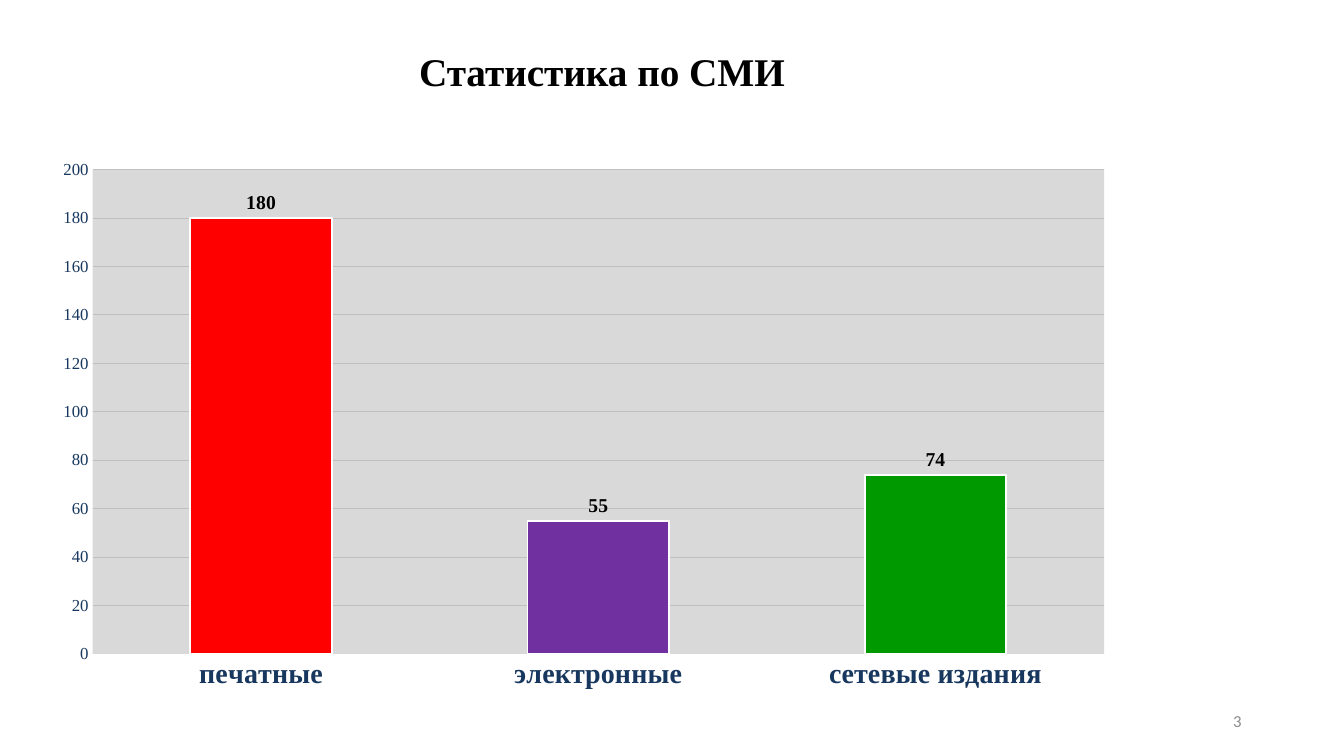
import pptx
import pptx.chart.data
import pptx.dml.color
import pptx.enum.chart
import pptx.enum.text
import pptx.oxml
import pptx.oxml.ns
import pptx.util

Pt = pptx.util.Pt
RGB = pptx.dml.color.RGBColor
Align = pptx.enum.text.PP_ALIGN
Anchor = pptx.enum.text.MSO_ANCHOR
Enum = pptx.enum.chart

BLACK = RGB(0, 0, 0)
WHITE = RGB(255, 255, 255)
GRAY = RGB(0x8C, 0x8C, 0x8C)
NAVY = RGB(0x17, 0x37, 0x5E)
PANEL = RGB(0xD9, 0xD9, 0xD9)
GRID = RGB(0xBF, 0xBF, 0xBF)
RED = RGB(255, 0, 0)
PURPLE = RGB(0x70, 0x30, 0xA0)
GREEN = RGB(0, 0x99, 0)


class Deck:
    serif = "Times New Roman"
    sans = "Calibri"

    def __init__(self):
        self.show = pptx.Presentation()
        self.show.slide_width = Pt(960)
        self.show.slide_height = Pt(540)
        self.slide = self.show.slides.add_slide(self.show.slide_layouts[5])

    def style(self, font, name, size, color, bold=False):
        font.name = name
        font.size = Pt(size)
        font.bold = bold
        font.color.rgb = color

    def label(self, frame, text, align, anchor, *look):
        frame.word_wrap = True
        frame.auto_size = pptx.enum.text.MSO_AUTO_SIZE.NONE
        frame.vertical_anchor = anchor
        para = frame.paragraphs[0]
        para.alignment = align
        run = para.add_run()
        run.text = text
        self.style(run.font, *look)
        return para

    def title(self, text, left, top, width, height):
        box = self.slide.shapes.title
        box.left, box.top = Pt(left), Pt(top)
        box.width, box.height = Pt(width), Pt(height)
        para = self.label(box.text_frame, text, Align.CENTER, Anchor.BOTTOM,
                          self.serif, 28, BLACK, True)
        para.line_spacing = 0.9

    def number(self, text, left, top, width, height):
        box = self.slide.shapes.add_textbox(Pt(left), Pt(top), Pt(width), Pt(height))
        self.label(box.text_frame, text, Align.RIGHT, Anchor.MIDDLE,
                   self.sans, 12, GRAY)

    def columns(self, bars, left, top, width, height):
        data = pptx.chart.data.CategoryChartData()
        data.categories = [name for name, value, color in bars]
        data.add_series("Series 1", [value for name, value, color in bars])
        chart = self.slide.shapes.add_chart(
            Enum.XL_CHART_TYPE.COLUMN_CLUSTERED,
            Pt(left), Pt(top), Pt(width), Pt(height), data).chart
        chart.has_title = False
        chart.has_legend = False
        self.style(chart.font, self.sans, 10, BLACK)
        plot = chart.plots[0]
        plot.gap_width = 138
        plot.overlap = -20
        plot.vary_by_categories = False
        self.paint(plot.series[0], [color for name, value, color in bars])
        self.axes(chart)
        self.panel(chart, 0.06, 0.03, 0.94, 0.85)

    def paint(self, series, colors):
        for item, color in [(series, colors[0])] + [
                (series.points[i], color) for i, color in enumerate(colors) if i]:
            item.format.fill.solid()
            item.format.fill.fore_color.rgb = color
            item.format.line.color.rgb = WHITE
            item.format.line.width = Pt(1.25)
        labels = series.data_labels
        labels.show_value = True
        labels.position = Enum.XL_LABEL_POSITION.OUTSIDE_END
        self.style(labels.font, self.serif, 14, BLACK, True)

    def axes(self, chart):
        names, scale = chart.category_axis, chart.value_axis
        for axis in (names, scale):
            axis.major_tick_mark = Enum.XL_TICK_MARK.NONE
            axis.minor_tick_mark = Enum.XL_TICK_MARK.NONE
        self.style(names.tick_labels.font, self.serif, 20, NAVY, True)
        self.style(scale.tick_labels.font, self.serif, 12, NAVY)
        names.format.line.color.rgb = PANEL
        names.format.line.width = Pt(0.75)
        scale.format.line.fill.background()
        scale.minimum_scale = 0
        scale.maximum_scale = 200
        scale.major_unit = 20
        scale.has_major_gridlines = True
        grid = scale.major_gridlines.format.line
        grid.color.rgb = GRID
        grid.width = Pt(0.75)

    def panel(self, chart, x, y, w, h):
        area = chart._chartSpace.xpath("c:chart/c:plotArea")[0]
        for old in area.xpath("c:layout"):
            area.remove(old)
        space = pptx.oxml.ns.nsdecls("c", "a")
        area.insert(0, pptx.oxml.parse_xml(
            f'<c:layout {space}><c:manualLayout><c:layoutTarget val="inner"/>'
            '<c:xMode val="edge"/><c:yMode val="edge"/>'
            f'<c:x val="{x}"/><c:y val="{y}"/><c:w val="{w}"/><c:h val="{h}"/>'
            '</c:manualLayout></c:layout>'))
        area.append(pptx.oxml.parse_xml(
            f'<c:spPr {space}><a:solidFill><a:srgbClr val="{PANEL}"/></a:solidFill>'
            '<a:ln><a:noFill/></a:ln></c:spPr>'))


def main():
    deck = Deck()
    deck.title("Статистика по СМИ", 70, 24, 720, 47.5)
    deck.number("3", 678, 500.5, 216, 29)
    deck.columns([("печатные", 180, RED),
                  ("электронные", 55, PURPLE),
                  ("сетевые издания", 74, GREEN)], 20, 109, 769, 407)
    deck.show.save("out.pptx")


if __name__ == "__main__":
    main()
